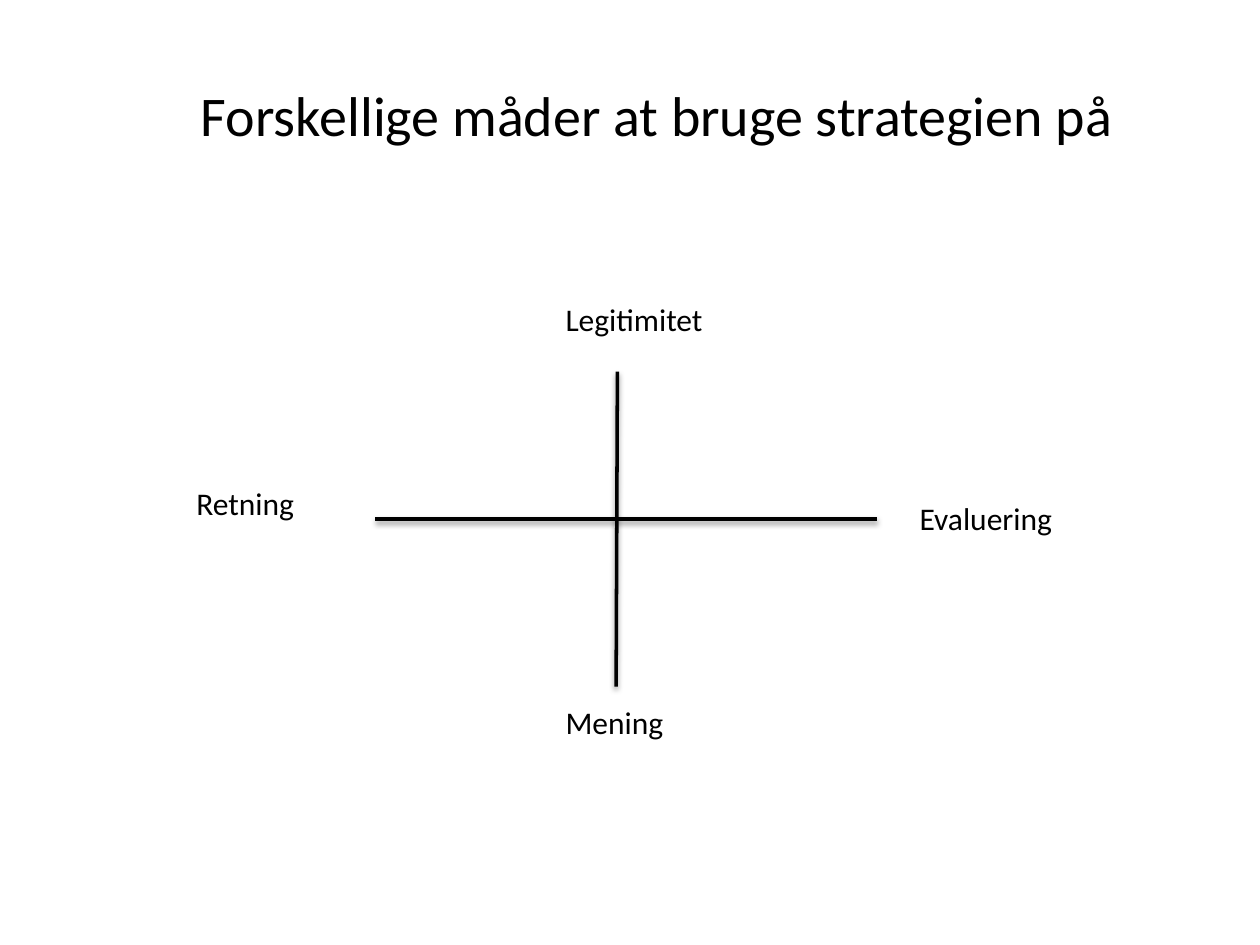
from lxml import etree
from pptx import Presentation
from pptx.dml.color import RGBColor
from pptx.enum.shapes import MSO_CONNECTOR
from pptx.enum.text import MSO_ANCHOR, MSO_AUTO_SIZE, PP_ALIGN
from pptx.oxml.ns import qn
from pptx.util import Inches, Pt

STRAIGHT = MSO_CONNECTOR.STRAIGHT
MIDDLE = MSO_ANCHOR.MIDDLE
TOP = MSO_ANCHOR.TOP
CENTER = PP_ALIGN.CENTER
LEFT = PP_ALIGN.LEFT
GROW = MSO_AUTO_SIZE.SHAPE_TO_FIT_TEXT
FIXED = MSO_AUTO_SIZE.NONE

FONT = "Calibri"
COLORS = {"ink": "000000", "background": "FFFFFF"}
LABEL_HEIGHT = 0.4


def add_text(slide, text, box, size, align=LEFT, anchor=TOP, auto_size=GROW):
    caption = slide.shapes.add_textbox(*(Inches(v) for v in box))
    frame = caption.text_frame
    frame.text = text
    frame.word_wrap = True
    frame.auto_size = auto_size
    frame.vertical_anchor = anchor
    paragraph = frame.paragraphs[0]
    paragraph.alignment = align
    font = paragraph.runs[0].font
    font.name = FONT
    font.size = Pt(size)
    font.color.rgb = RGBColor.from_string(COLORS["ink"])


def add_axis(slide, start, end):
    axis = slide.shapes.add_connector(
        STRAIGHT, *(Inches(v) for v in (*start, *end)))
    axis.line.color.rgb = RGBColor.from_string(COLORS["ink"])
    axis.line.width = Pt(2)
    # Soft shadow straight below the line
    effects = etree.SubElement(axis._element.spPr, qn("a:effectLst"))
    shadow = etree.SubElement(
        effects, qn("a:outerShdw"), blurRad=str(Pt(3.1)), dist=str(Pt(1.6)),
        dir=str(90 * 60000), rotWithShape="0")
    tint = etree.SubElement(shadow, qn("a:srgbClr"), val=COLORS["ink"])
    etree.SubElement(tint, qn("a:alpha"), val="38000")


def add_title(slide, box):
    add_text(slide, "Forskellige måder at bruge strategien på", box, 32,
             CENTER, MIDDLE, FIXED)


def add_strategy_cross(slide, box):
    left, top, width, height = box
    right, bottom = left + width, top + height
    center_x, center_y = left + 1.92, top + 1.17

    # Axes; the vertical one leans very slightly
    add_axis(slide, (left, center_y), (right, center_y))
    add_axis(slide, (center_x, top), (center_x - 0.01, bottom))

    # Labels at the four axis ends: text, left, top, width
    labels = [
        ("Retning", left - 1.52, center_y - 0.33, 1.36),
        ("Legitimitet", center_x - 0.51, top - 0.62, 1.93),
        ("Mening", center_x - 0.51, bottom + 0.08, 1.75),
        ("Evaluering", right + 0.24, center_y - 0.21, 1.36),
    ]
    for text, x, y, label_width in labels:
        add_text(slide, text, (x, y, label_width, LABEL_HEIGHT), 18)


def main():
    prs = Presentation()
    prs.slide_width, prs.slide_height = Inches(10), Inches(7.5)
    slide = prs.slides.add_slide(prs.slide_layouts[6])
    background = slide.background.fill
    background.solid()
    background.fore_color.rgb = RGBColor.from_string(COLORS["background"])

    add_title(slide, (0.43, 0.28, 9.57, 1.25))
    add_strategy_cross(slide, (2.98, 2.95, 3.98, 2.5))
    prs.save("out.pptx")


if __name__ == "__main__":
    main()
